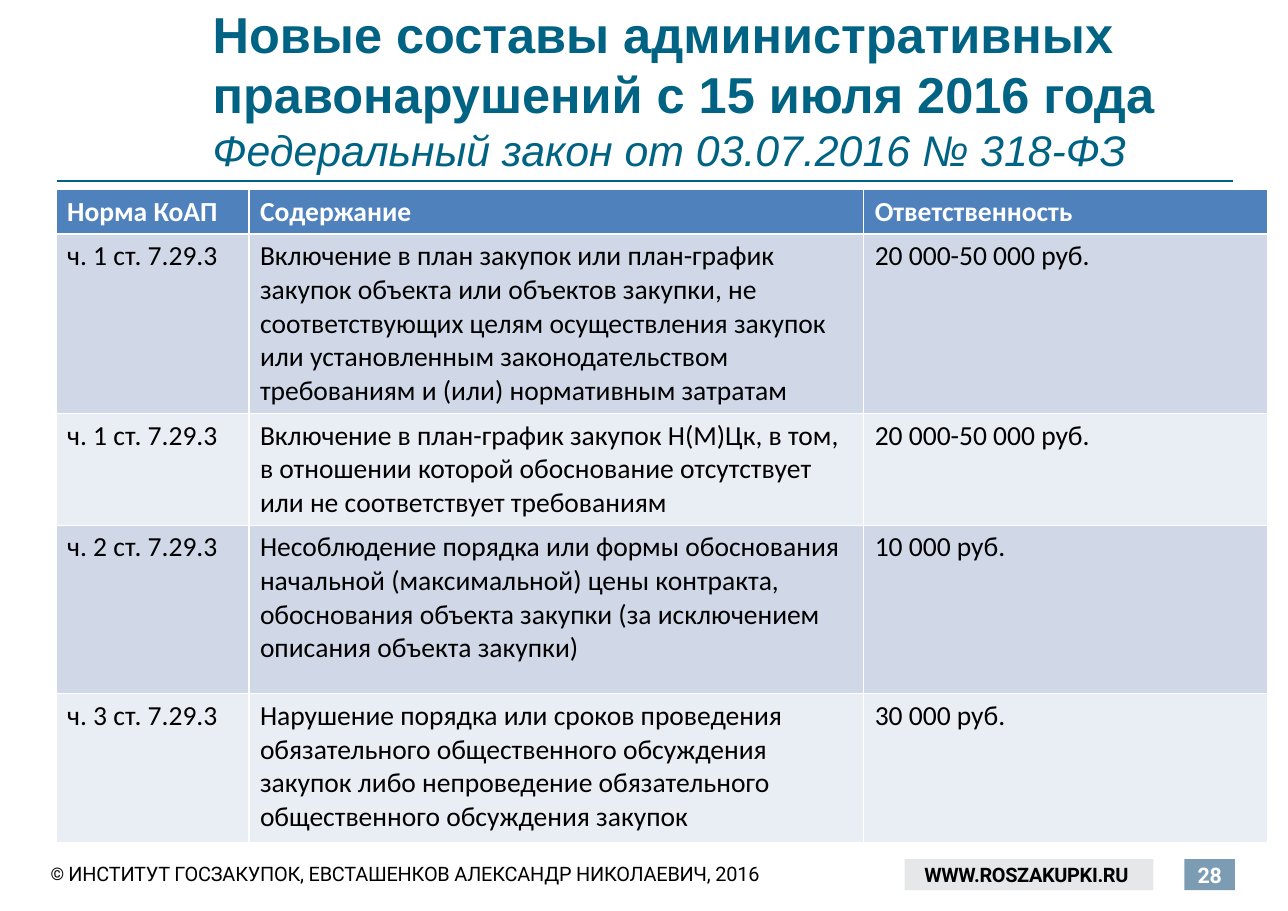
"""Build the slide on new administrative offences as of 15 July 2016."""
from dataclasses import dataclass

from lxml import etree
from pptx import Presentation
from pptx import util as u
from pptx.dml.color import RGBColor
from pptx.enum import shapes, text
from pptx.oxml.ns import qn

HEADLINE = "Новые составы административных правонарушений с 15 июля 2016 года"
LAW = "Федеральный закон от 03.07.2016 № 318-ФЗ"
HEADINGS = ("Норма КоАП", "Содержание", "Ответственность")
OFFENCES = [
    ("ч. 1 ст. 7.29.3",
     "Включение в план закупок или план-график закупок объекта или объектов закупки, "
     "не соответствующих целям осуществления закупок или установленным "
     "законодательством требованиям и (или) нормативным затратам",
     "20 000-50 000 руб."),
    ("ч. 1 ст. 7.29.3",
     "Включение в план-график закупок Н(М)Цк, в том, в отношении которой "
     "обоснование отсутствует или не соответствует требованиям",
     "20 000-50 000 руб."),
    ("ч. 2 ст. 7.29.3",
     "Несоблюдение порядка или формы обоснования начальной (максимальной) цены "
     "контракта, обоснования объекта закупки (за исключением описания объекта закупки)",
     "10 000 руб."),
    ("ч. 3 ст. 7.29.3",
     "Нарушение порядка или сроков проведения обязательного общественного обсуждения "
     "закупок либо непроведение обязательного общественного обсуждения закупок",
     "30 000 руб."),
]
COPYRIGHT_SIGN = "© "
COPYRIGHT = "ИНСТИТУТ ГОСЗАКУПОК, ЕВСТАШЕНКОВ АЛЕКСАНДР НИКОЛАЕВИЧ, 2016"
SITE = "WWW.ROSZAKUPKI.RU"
PAGE = "28"

COLUMNS = (175, 558, 367)
ROWS = (38, 153, 96, 153, 135)


@dataclass(frozen=True)
class Theme:
    """Colours, fonts and type sizes of the slide."""
    teal: str = "006384"
    black: str = "000000"
    white: str = "FFFFFF"
    header: str = "4F81BD"
    bands: tuple = ("D0D8E8", "E9EDF4")
    site: str = "E6E7E8"
    page: str = "7C9CB4"
    title_font: str = "Arial"
    table_font: str = "Calibri"
    footer_font: str = "Roboto"
    headline: float = 33
    law: float = 28
    table: float = 18
    footer: float = 13
    page_size: float = 14
    sign: float = 19.5


THEME = Theme()


def px(length):
    """Turn px, 100 to the inch, into EMU."""
    return u.Emu(length * 9144)


def style(font, name, size, color, bold=False):
    """Set the face, size, colour and weight of a font."""
    font.name, font.size, font.bold = name, u.Pt(size), bold
    font.color.rgb = RGBColor.from_string(color)


def paint(target, color):
    """Give a shape or cell a solid fill."""
    target.fill.solid()
    target.fill.fore_color.rgb = RGBColor.from_string(color)


def set_frame(frame, left=0, vertical=0):
    """Set the insets, wrapping and middle anchor of a text frame."""
    frame.margin_left, frame.margin_right = px(left), 0
    frame.margin_top = frame.margin_bottom = px(vertical)
    frame.word_wrap = True
    frame.auto_size = text.MSO_AUTO_SIZE.NONE
    frame.vertical_anchor = text.MSO_ANCHOR.MIDDLE


def add_title(slide):
    """Fill the title placeholder with the headline and the law."""
    title = slide.shapes.title
    title.left, title.top, title.width, title.height = map(px, (193, 2, 929, 158))
    set_frame(title.text_frame)
    paragraph = title.text_frame.paragraphs[0]
    paragraph.alignment = text.PP_ALIGN.LEFT
    headline = paragraph.add_run()
    headline.text = HEADLINE
    style(headline.font, THEME.title_font, THEME.headline, THEME.teal, True)
    paragraph.add_line_break()
    law = paragraph.add_run()
    law.text = LAW
    style(law.font, THEME.title_font, THEME.law, THEME.teal)
    law.font.italic = True


def add_rule(slide):
    """Draw the line under the title."""
    rule = slide.shapes.add_connector(
        shapes.MSO_CONNECTOR.STRAIGHT, px(52), px(164), px(1119), px(164))
    rule.line.color.rgb = RGBColor.from_string(THEME.teal)
    rule.line.width = u.Pt(1.42)
    etree.SubElement(rule._element.spPr, qn("a:effectLst"))


def add_offences(slide):
    """Add the table of offences."""
    offences = slide.shapes.add_table(
        len(ROWS), len(COLUMNS), px(51), px(172), px(sum(COLUMNS)), px(sum(ROWS))).table
    for column, width in zip(offences.columns, COLUMNS):
        column.width = px(width)
    for r, (height, entries) in enumerate(zip(ROWS, [HEADINGS, *OFFENCES])):
        offences.rows[r].height = px(height)
        heading = r == 0
        for c, entry in enumerate(entries):
            cell = offences.cell(r, c)
            cell.text = entry
            paint(cell, THEME.header if heading else THEME.bands[(r - 1) % 2])
            style(cell.text_frame.paragraphs[0].font, THEME.table_font, THEME.table,
                  THEME.white if heading else THEME.black, heading)


def add_tag(slide, label, left, width, fill, size, color, align, inset):
    """Add a filled footer tag with its label."""
    tag = slide.shapes.add_shape(
        shapes.MSO_SHAPE.RECTANGLE, px(left), px(780), px(width), px(28))
    tag.shadow.inherit = False
    tag.line.fill.background()
    paint(tag, fill)
    set_frame(tag.text_frame, inset)
    paragraph = tag.text_frame.paragraphs[0]
    paragraph.alignment = align
    run = paragraph.add_run()
    run.text = label
    run._r.get_or_add_rPr().set("spc", "-20")
    style(paragraph.font, THEME.footer_font, size, color, True)


def add_copyright(slide):
    """Add the copyright line."""
    notice = slide.shapes.add_textbox(px(45), px(775), px(683), px(41))
    set_frame(notice.text_frame, 1, 10)
    paragraph = notice.text_frame.paragraphs[0]
    paragraph.line_spacing = u.Pt(14.8)
    for words, size, attribute, value in (
            (COPYRIGHT_SIGN, THEME.sign, "baseline", "4000"),
            (COPYRIGHT, THEME.footer, "spc", "-10")):
        run = paragraph.add_run()
        run.text = words
        run._r.get_or_add_rPr().set(attribute, value)
        style(run.font, THEME.footer_font, size, THEME.black)


def main():
    """Build and save the slide."""
    deck = Presentation()
    deck.slide_width, deck.slide_height = px(1169), px(827)
    slide = deck.slides.add_slide(deck.slide_layouts[5])
    add_rule(slide)
    add_tag(slide, SITE, 821, 226, THEME.site, THEME.footer, THEME.black,
            text.PP_ALIGN.LEFT, 18)
    add_tag(slide, PAGE, 1075, 46, THEME.page, THEME.page_size, THEME.white,
            text.PP_ALIGN.CENTER, 0)
    add_copyright(slide)
    add_title(slide)
    add_offences(slide)
    deck.save("out.pptx")


if __name__ == "__main__":
    main()
